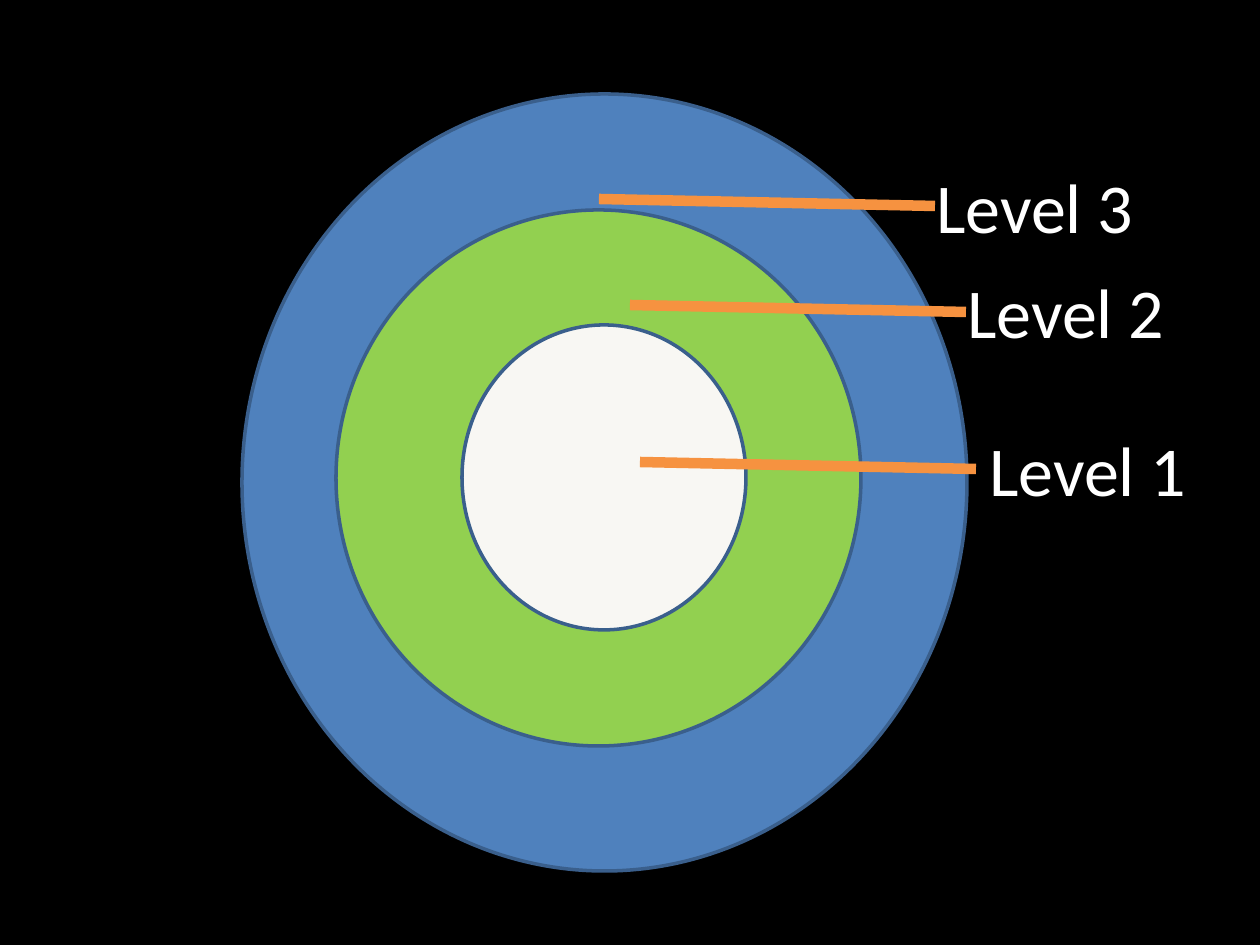
from pptx import Presentation
from pptx.dml.color import RGBColor
from pptx.enum.shapes import MSO_CONNECTOR, MSO_SHAPE
from pptx.enum.text import MSO_AUTO_SIZE
from pptx.oxml.ns import qn
from pptx.util import Pt
from lxml.etree import SubElement

PX = 914400 // 126
SLIDE = (1260, 945)
RINGS = [
    (242, 94, 725, 777, "4F81BD"),
    (336, 210, 525, 536, "92D050"),
    (462, 325, 284, 305, "F8F7F3"),
]
LABELS = [
    ("Level 1", 977, 420),
    ("Level 2", 955, 262),
    ("Level 3", 924, 157),
]
LABEL_SIZE = (224, 97)
POINTERS = [(640, 462), (630, 305), (599, 199)]
POINTER_RUN, POINTER_DROP = 336, 7


def px(*values):
    return [v * PX for v in values]


def rgb(color):
    return RGBColor.from_string(color)


def add_ring(s, x, y, w, h, color):
    sp = s.shapes.add_shape(MSO_SHAPE.OVAL, *px(x, y, w, h))
    sp.shadow.inherit = False
    sp.fill.solid()
    sp.fill.fore_color.rgb = rgb(color)
    sp.line.color.rgb = rgb("3A5F8C")
    sp.line.width = Pt(2)


def add_label(s, text, x, y):
    tf = s.shapes.add_textbox(*px(x, y, *LABEL_SIZE)).text_frame
    tf.word_wrap = False
    tf.auto_size = MSO_AUTO_SIZE.SHAPE_TO_FIT_TEXT
    tf.text = text
    font = tf.paragraphs[0].runs[0].font
    font.name = "Calibri"
    font.size = Pt(40)
    font.color.rgb = rgb("FFFFFF")


def add_pointer(s, x, y):
    ends = px(x, y, x + POINTER_RUN, y + POINTER_DROP)
    line = s.shapes.add_connector(MSO_CONNECTOR.STRAIGHT, *ends)
    line.line.color.rgb = rgb("F69240")
    line.line.width = Pt(6)
    SubElement(line._element.spPr, qn("a:effectLst"))


def main():
    prs = Presentation()
    prs.slide_width, prs.slide_height = px(*SLIDE)
    s = prs.slides.add_slide(prs.slide_layouts[6])
    s.background.fill.solid()
    s.background.fill.fore_color.rgb = rgb("000000")
    for ring in RINGS:
        add_ring(s, *ring)
    for label in LABELS:
        add_label(s, *label)
    for pointer in POINTERS:
        add_pointer(s, *pointer)
    prs.save("out.pptx")


if __name__ == "__main__":
    main()
